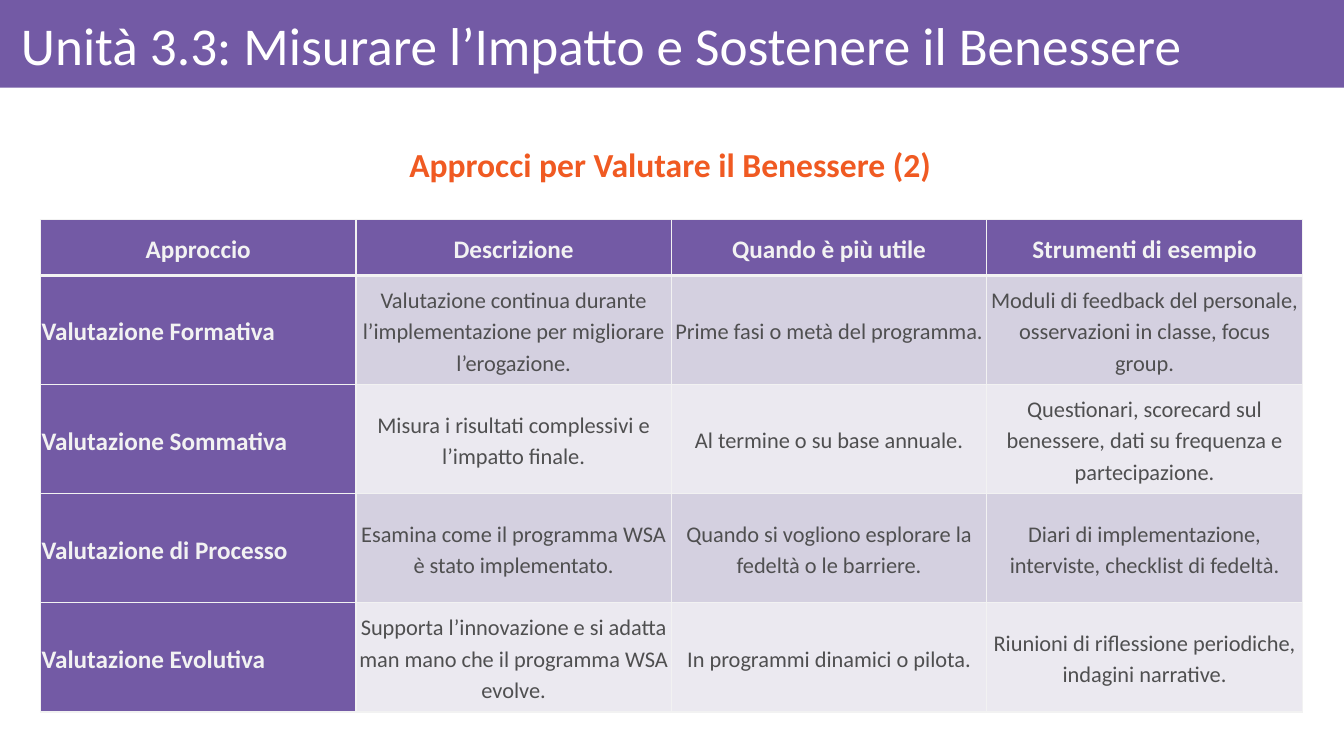
from lxml import etree
from pptx import Presentation
from pptx.dml.color import RGBColor
from pptx.enum.shapes import MSO_SHAPE
from pptx.enum.text import MSO_ANCHOR, PP_ALIGN
from pptx.oxml.ns import qn
from pptx.util import Cm, Pt

RECTANGLE = MSO_SHAPE.RECTANGLE
MIDDLE = MSO_ANCHOR.MIDDLE
LEFT, CENTER = PP_ALIGN.LEFT, PP_ALIGN.CENTER

PURPLE, ORANGE, WHITE = "735AA5", "F05A22", "FFFFFF"
PALE, GREY = "F2F2F2", "4F4F50"
BANDS = ("D4D0E0", "EBE9F0")

APPROACHES = [
    ("Approccio", "Descrizione", "Quando è più utile", "Strumenti di esempio"),
    ("Valutazione Formativa",
     "Valutazione continua durante l’implementazione per migliorare l’erogazione.",
     "Prime fasi o metà del programma.",
     "Moduli di feedback del personale, osservazioni in classe, focus group."),
    ("Valutazione Sommativa",
     "Misura i risultati complessivi e l’impatto finale.",
     "Al termine o su base annuale.",
     "Questionari, scorecard sul benessere, dati su frequenza e partecipazione."),
    ("Valutazione di Processo",
     "Esamina come il programma WSA è stato implementato.",
     "Quando si vogliono esplorare la fedeltà o le barriere.",
     "Diari di implementazione, interviste, checklist di fedeltà."),
    ("Valutazione Evolutiva",
     "Supporta l’innovazione e si adatta man mano che il programma WSA evolve.",
     "In programmi dinamici o pilota.",
     "Riunioni di riflessione periodiche, indagini narrative."),
]


def color(value):
    return RGBColor.from_string(value)


def assign(target, values):
    for name, value in values.items():
        setattr(target, name, value)


class SlideBuilder:
    font = "Calibri"

    def __init__(self, slide):
        self.slide = slide

    def fill_paragraph(self, paragraph, text, size, ink, bold=False, align=LEFT,
                       spacing=0.9):
        assign(paragraph, {"alignment": align, "line_spacing": spacing})
        run = paragraph.add_run()
        run.text = text
        assign(run.font, {"name": self.font, "size": Pt(size), "bold": bold})
        run.font.color.rgb = color(ink)

    def band(self, left, top, width, height, fill):
        band = self.slide.shapes.add_shape(
            RECTANGLE, Cm(left), Cm(top), Cm(width), Cm(height))
        band.shadow.inherit = False
        band.fill.solid()
        band.fill.fore_color.rgb = color(fill)
        band.line.fill.background()

    def text(self, left, top, width, height, text, **style):
        frame = self.slide.shapes.add_textbox(
            Cm(left), Cm(top), Cm(width), Cm(height)).text_frame
        assign(frame, {"word_wrap": True, "vertical_anchor": MIDDLE,
                       "margin_left": Cm(0.25), "margin_right": Cm(0.2),
                       "margin_top": Cm(0.14), "margin_bottom": Cm(0.14)})
        self.fill_paragraph(frame.paragraphs[0], text, **style)

    def borders(self, cell, widths):
        properties = cell._tc.get_or_add_tcPr()
        for position, (side, width) in enumerate(widths.items()):
            line = etree.Element(qn(f"a:ln{side}"), w=str(Pt(width)))
            fill = etree.SubElement(line, qn("a:solidFill"))
            etree.SubElement(fill, qn("a:srgbClr"), val=PALE)
            properties.insert(position, line)

    def cell(self, cell, text, row, column):
        heading = row == 0 or column == 0
        margins = {f"margin_{side}": Cm(0.03)
                   for side in ("left", "right", "top", "bottom")}
        assign(cell, {"vertical_anchor": MIDDLE, **margins})
        cell.fill.solid()
        cell.fill.fore_color.rgb = color(PURPLE if heading else BANDS[(row - 1) % 2])
        self.borders(cell, {"L": 1, "R": 1, "T": 3 if row == 1 else 1,
                            "B": 3 if row == 0 else 1})
        self.fill_paragraph(cell.text_frame.paragraphs[0], text,
                            size=18 if heading else 16, ink=PALE if heading else GREY,
                            bold=heading, spacing=1.15,
                            align=LEFT if row and column == 0 else CENTER)

    def table(self, left, top, column_width, row_heights, rows):
        columns = len(rows[0])
        table = self.slide.shapes.add_table(
            len(rows), columns, Cm(left), Cm(top),
            Cm(column_width * columns), Cm(sum(row_heights))).table
        assign(table, {"first_col": True, "horz_banding": False})
        for column in table.columns:
            column.width = Cm(column_width)
        for row, (height, texts) in enumerate(zip(row_heights, rows)):
            table.rows[row].height = Cm(height)
            for column, text in enumerate(texts):
                self.cell(table.cell(row, column), text, row, column)


def main():
    deck = Presentation()
    assign(deck, {"slide_width": Cm(33.87), "slide_height": Cm(19.05)})
    builder = SlideBuilder(deck.slides.add_slide(deck.slide_layouts[6]))
    builder.band(0, 0, 33.87, 2.21, PURPLE)
    builder.text(0.28, 0.23, 33.17, 1.98,
                 "Unità 3.3: Misurare l’Impatto e Sostenere il Benessere",
                 size=38, ink=WHITE)
    builder.text(0.28, 3.45, 33.17, 1.52, "Approcci per Valutare il Benessere (2)",
                 size=24, ink=ORANGE, bold=True, align=CENTER)
    builder.table(1.02, 5.54, 7.95, [1.4] + [2.75] * 4, APPROACHES)
    deck.save("out.pptx")


if __name__ == "__main__":
    main()
